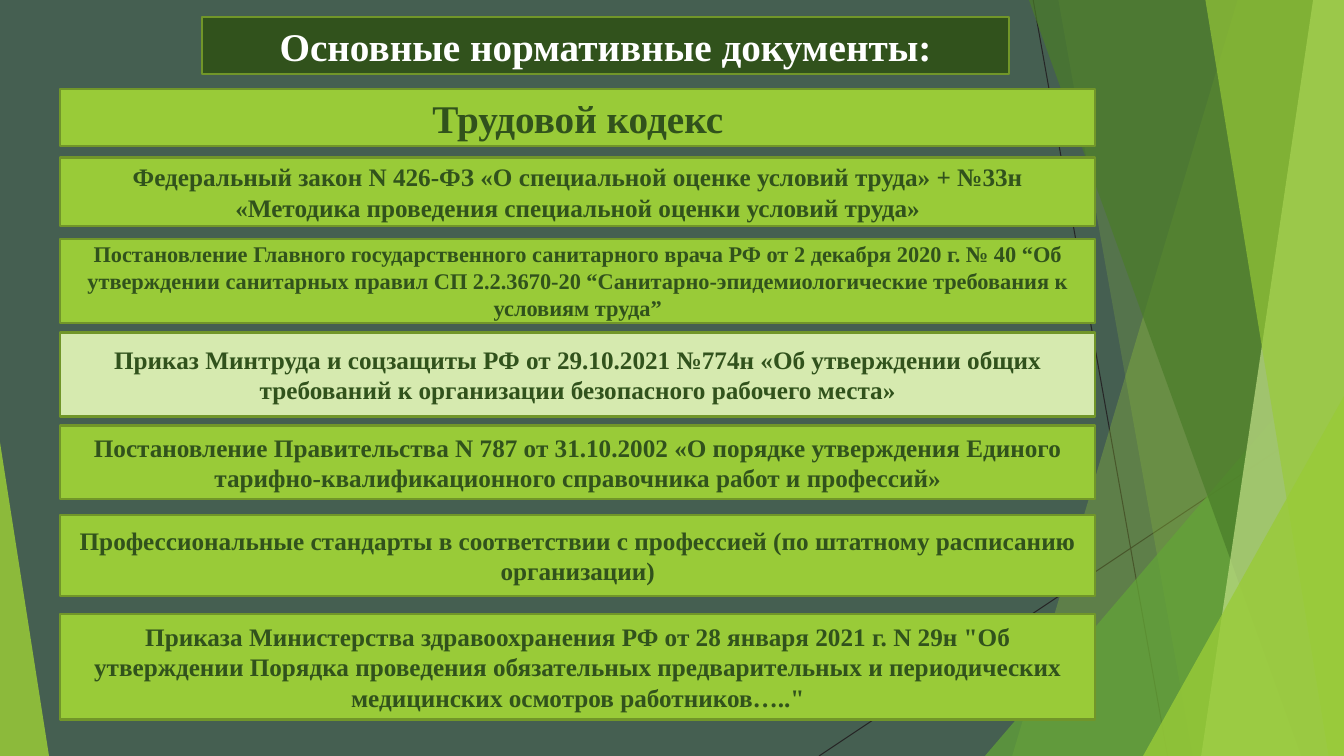
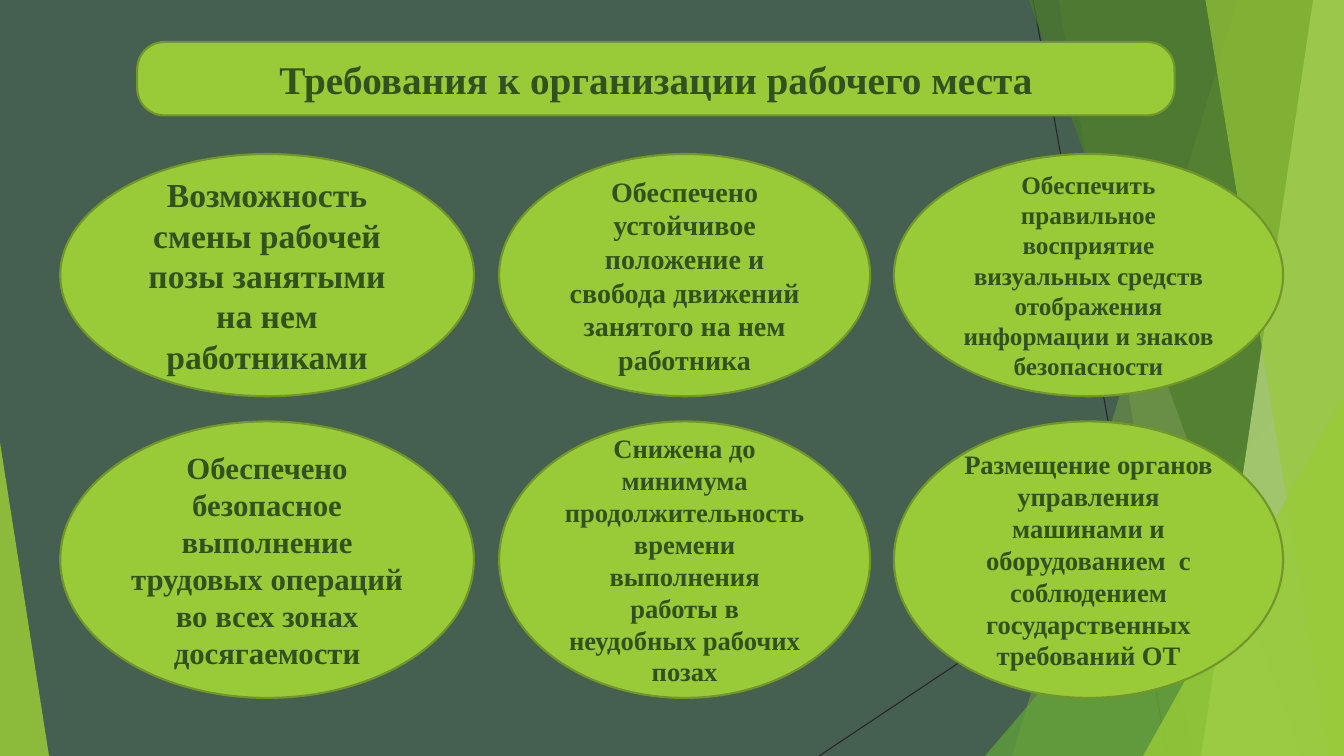
import dataclasses

import pptx
import pptx.dml.color
import pptx.enum.shapes
import pptx.enum.text
import pptx.oxml.ns
import pptx.oxml.xmlchemy
import pptx.util

Pt = pptx.util.Pt
SHAPES = pptx.enum.shapes.MSO_SHAPE


@dataclasses.dataclass(frozen=True)
class Theme:
    font: str = "Times New Roman"
    background: str = "455F51"
    lime: str = "99CB38"
    pale_lime: str = "D6EAAF"
    mist: str = "C2E088"
    green: str = "63A537"
    forest: str = "4A7C29"
    dark: str = "31521C"
    border: str = "719629"
    hairline: str = "262626"
    white: str = "FFFFFF"
    title_size: int = 28
    body_size: int = 18
    dense_size: int = 16
    border_width: float = 1.5
    hairline_width: float = 0.75


THEME = Theme()
WIDTH, HEIGHT = 960, 540

RAYS = [((738, 0), (834, HEIGHT)), ((WIDTH, 290), (585, HEIGHT))]
DECOR = [
    ("veil", (884, 723), THEME.lime, 30),
    ("veil", (756, 852), THEME.lime, 20),
    ("corner", (703.5, 240, 256.5, 300, 1), THEME.green, 72),
    ("veil", (735, 929.5), THEME.forest, 70),
    ("veil", (938, 858), THEME.mist, 70),
    ("veil", (861, 949), THEME.lime, 65),
    ("corner", (816.5, 283, 143.5, 257, 1), THEME.lime, 80),
    ("corner", (0, 316, 35, 224, 0), THEME.lime, 85),
]

DOCUMENTS_TITLE = "Основные нормативные документы:"
DOCUMENTS_LEFT, DOCUMENTS_WIDTH = 43, 739.5
DOCUMENTS = [
    (63.5, 41, THEME.title_size, THEME.lime, "Трудовой кодекс"),
    (112.5, 49, THEME.body_size, THEME.lime,
     "Федеральный закон N 426-ФЗ «О специальной оценке условий труда» + №33н "
     "«Методика проведения специальной оценки условий труда»"),
    (170.5, 60, THEME.dense_size, THEME.lime,
     "Постановление Главного государственного санитарного врача РФ от 2 декабря 2020 г. "
     "№ 40 “Об утверждении санитарных правил СП 2.2.3670-20 "
     "“Санитарно-эпидемиологические требования к условиям труда”"),
    (237.5, 60, THEME.body_size, THEME.pale_lime,
     "Приказ Минтруда и соцзащиты РФ от 29.10.2021 №774н «Об утверждении общих "
     "требований к организации безопасного рабочего места»"),
    (304, 52.5, THEME.body_size, THEME.lime,
     "Постановление Правительства N 787 от 31.10.2002 «О порядке утверждения Единого "
     "тарифно-квалификационного справочника работ и профессий»"),
    (368, 57.5, THEME.body_size, THEME.lime,
     "Профессиональные стандарты в соответствии с профессией "
     "(по штатному расписанию организации)"),
    (438.5, 75.5, THEME.body_size, THEME.lime,
     "Приказа Министерства здравоохранения РФ от 28 января 2021 г. N 29н \"Об "
     "утверждении Порядка проведения обязательных предварительных и периодических "
     "медицинских осмотров работников…..\""),
]

WORKPLACE_TITLE = "Требования к организации рабочего места"
COLUMNS = [(43, 295.5), (356.5, 265), (638.5, 278)]
ROWS = [(110, 173), (301, 197.5)]
REQUIREMENTS = [
    [(24, "Возможность смены рабочей позы занятыми на нем работниками"),
     (20, "Обеспечено устойчивое положение и свобода движений занятого на нем работника"),
     (18, "Обеспечить правильное восприятие визуальных средств отображения информации "
          "и знаков безопасности")],
    [(22, "Обеспечено безопасное выполнение трудовых операций во всех зонах досягаемости"),
     (19, "Снижена до минимума продолжительность времени выполнения работы "
          "в неудобных рабочих позах"),
     (19, "Размещение органов управления машинами и оборудованием  с соблюдением "
          "государственных требований ОТ")],
]


def rgb(color):
    return pptx.dml.color.RGBColor.from_string(color)


def paint(shape, color, opacity=100):
    shape.shadow.inherit = False
    shape.fill.solid()
    shape.fill.fore_color.rgb = rgb(color)
    if opacity < 100:
        tint = shape.element.spPr.find(".//" + pptx.oxml.ns.qn("a:srgbClr"))
        alpha = pptx.oxml.xmlchemy.OxmlElement("a:alpha")
        alpha.set("val", str(opacity * 1000))
        tint.append(alpha)


def write(shape, text, size, color):
    frame = shape.text_frame
    frame.text = text
    frame.word_wrap = True
    frame.auto_size = pptx.enum.text.MSO_AUTO_SIZE.NONE
    frame.vertical_anchor = pptx.enum.text.MSO_ANCHOR.MIDDLE
    paragraph = frame.paragraphs[0]
    paragraph.alignment = pptx.enum.text.PP_ALIGN.CENTER
    paragraph.font.name = THEME.font
    paragraph.font.size = Pt(size)
    paragraph.font.bold = True
    paragraph.font.color.rgb = rgb(color)


def add_panel(slide, kind, box, fill):
    panel = slide.shapes.add_shape(kind, *map(Pt, box))
    paint(panel, fill)
    panel.line.color.rgb = rgb(THEME.border)
    panel.line.width = Pt(THEME.border_width)
    return panel


def set_title(slide, text, kind, box, fill, color):
    panel = add_panel(slide, kind, box, fill)
    title = slide.shapes.title
    title.left, title.top, title.width, title.height = map(Pt, box)
    write(title, text, THEME.title_size, color)
    slide.shapes.element.append(title.element)
    return panel


def add_decor(slide, layout):
    group = slide.shapes.add_group_shape()
    for start, end in RAYS:
        ray = group.shapes.add_connector(
            pptx.enum.shapes.MSO_CONNECTOR.STRAIGHT, *map(Pt, start + end))
        ray.line.color.rgb = rgb(THEME.hairline)
        ray.line.width = Pt(THEME.hairline_width)
        ray.element.spPr.append(pptx.oxml.xmlchemy.OxmlElement("a:effectLst"))
    for kind, geometry, color, opacity in DECOR:
        if kind == "veil":
            top, bottom = geometry
            outline = group.shapes.build_freeform(Pt(top), Pt(0))
            corners = [(WIDTH, 0), (WIDTH, HEIGHT), (bottom, HEIGHT)]
            outline.add_line_segments([(Pt(x), Pt(y)) for x, y in corners])
            facet = outline.convert_to_shape()
        else:
            *box, apex = geometry
            facet = group.shapes.add_shape(SHAPES.ISOSCELES_TRIANGLE, *map(Pt, box))
            facet.adjustments[0] = apex
        paint(facet, color, opacity)
        facet.line.fill.background()
    layout.shapes.element.append(group.element)


def add_documents(slide):
    set_title(slide, DOCUMENTS_TITLE, SHAPES.RECTANGLE, (144.5, 12, 576, 41),
              THEME.dark, THEME.white)
    for top, height, size, fill, text in DOCUMENTS:
        box = (DOCUMENTS_LEFT, top, DOCUMENTS_WIDTH, height)
        write(add_panel(slide, SHAPES.RECTANGLE, box, fill), text, size, THEME.dark)


def add_workplace(slide):
    banner = set_title(slide, WORKPLACE_TITLE, SHAPES.ROUNDED_RECTANGLE,
                       (98, 30, 741, 52.5), THEME.lime, THEME.dark)
    banner.adjustments[0] = 0.37
    for (top, height), requirements in zip(ROWS, REQUIREMENTS):
        for (left, width), (size, text) in zip(COLUMNS, requirements):
            oval = add_panel(slide, SHAPES.OVAL, (left, top, width, height), THEME.lime)
            write(oval, text, size, THEME.dark)


def main():
    deck = pptx.Presentation()
    deck.slide_width, deck.slide_height = Pt(WIDTH), Pt(HEIGHT)
    backdrop = deck.slide_master.background.fill
    backdrop.solid()
    backdrop.fore_color.rgb = rgb(THEME.background)
    layout = deck.slide_layouts.get_by_name("Title Only")
    for placeholder in list(layout.placeholders)[1:]:
        layout.shapes.element.remove(placeholder.element)
    documents, workplace = [deck.slides.add_slide(layout) for _ in range(2)]
    add_decor(documents, layout)
    add_documents(documents)
    add_workplace(workplace)
    deck.save("out.pptx")


if __name__ == "__main__":
    main()
